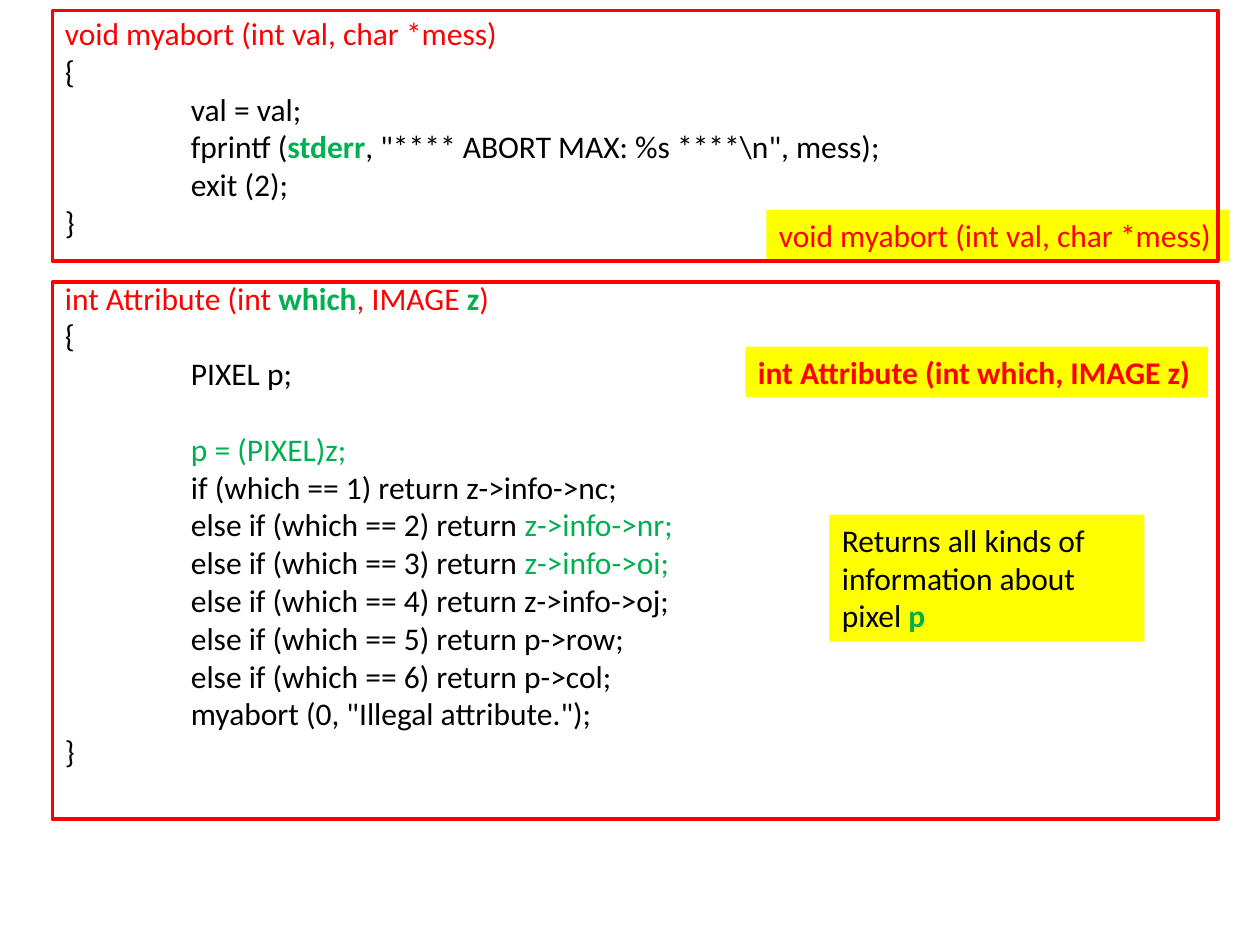
from lxml import etree
from pptx import Presentation, util as u
from pptx.dml.color import RGBColor
from pptx.enum import shapes, text
from pptx.oxml import ns

RED = RGBColor(0xFF, 0x00, 0x00)
GREEN = RGBColor(0x00, 0xB0, 0x50)
BLACK = RGBColor(0x00, 0x00, 0x00)
YELLOW = RGBColor(0xFF, 0xFF, 0x00)

# Grid: 120 columns by 90 rows on a 10 x 7.5 inch slide
CELL = u.Inches(10) // 120
FONT, SIZE, LINE = "Calibri", 18, 21.6
TAB = u.Inches(1)

# Each line is a list of (text, format) runs
ABORT_CODE = [
    [("void myabort (int val, char *mess)", dict(color=RED))],
    [("{", {})],
    [("\tval = val;", {})],
    [("\tfprintf (", {}), ("stderr", dict(color=GREEN, bold=True)),
     (', "**** ABORT MAX: %s ****\\n", mess);', {})],
    [("\texit (2);", {})],
    [("}", {})],
]
ATTRIBUTE_CODE = [
    [("int Attribute (int ", dict(color=RED)), ("which", dict(color=GREEN, bold=True)),
     (", IMAGE ", dict(color=RED)), ("z", dict(color=GREEN, bold=True)),
     (")", dict(color=RED))],
    [("{", {})],
    [("\tPIXEL p;", {})],
]
ATTRIBUTE_BODY = [
    [("\t", {}), ("p = (PIXEL)z;", dict(color=GREEN))],
    [("\tif (which == 1) return z->info->nc;", {})],
    [("\telse if (which == 2) return ", {}), ("z->info->nr;", dict(color=GREEN))],
    [("\telse if (which == 3) return ", {}), ("z->info->oi;", dict(color=GREEN))],
    [("\telse if (which == 4) return z->info->oj;", {})],
    [("\telse if (which == 5) return p->row;", {})],
    [("\telse if (which == 6) return p->col;", {})],
    [('\tmyabort (0, "Illegal attribute.");', {})],
    [("}", {})],
]


def cells(*grid):
    return [round(n * CELL) for n in grid]


def add_run(p, content, color=BLACK, bold=False):
    r = p.add_run()
    r.text = content
    r.font.name, r.font.size = FONT, u.Pt(SIZE)
    r.font.bold = bold
    r.font.color.rgb = color


def set_tab(p, position):
    tabs = etree.SubElement(p._p.get_or_add_pPr(), ns.qn("a:tabLst"))
    etree.SubElement(tabs, ns.qn("a:tab"), pos=str(position), algn="l")


def add_code(s, grid, blocks):
    """One text box; blocks are set one line apart."""
    tf = s.shapes.add_textbox(*cells(*grid)).text_frame
    tf.word_wrap = True
    p = None
    for block in blocks:
        for i, line in enumerate(block):
            first = p is None
            p = tf.paragraphs[0] if first else tf.add_paragraph()
            if i == 0 and not first:
                p.space_before = u.Pt(LINE)
            set_tab(p, TAB)
            for content, fmt in line:
                add_run(p, content, **fmt)


def add_box(s, grid):
    sp = s.shapes.add_shape(shapes.MSO_SHAPE.RECTANGLE, *cells(*grid))
    sp.shadow.inherit = False
    return sp


def add_frame(s, grid):
    sp = add_box(s, grid)
    sp.fill.background()
    sp.line.color.rgb = RED
    sp.line.width = u.Pt(2)


def add_label(s, grid, runs, wrap=False):
    sp = add_box(s, grid)
    sp.fill.solid()
    sp.fill.fore_color.rgb = YELLOW
    sp.line.fill.background()
    tf = sp.text_frame
    tf.word_wrap = wrap
    tf.vertical_anchor = text.MSO_ANCHOR.TOP
    p = tf.paragraphs[0]
    p.alignment = text.PP_ALIGN.LEFT
    for content, fmt in runs:
        add_run(p, content, **fmt)


def main():
    prs = Presentation()
    prs.slide_width, prs.slide_height = cells(120, 90)
    s = prs.slides.add_slide(prs.slide_layouts[6])

    # Source code of both functions
    add_code(s, (5, 0.75, 93, 74), [ABORT_CODE, ATTRIBUTE_CODE, ATTRIBUTE_BODY])

    # Signature labels
    add_label(s, (73, 20, 44.05, 4.85),
              [("void myabort (int val, char *mess)", dict(color=RED))])
    add_label(s, (71, 33, 44.05, 4.85),
              [("int Attribute (int which, IMAGE z)", dict(color=RED, bold=True))])

    # Frames around the functions
    for top, height in ((1, 23.85), (26.85, 51.15)):
        add_frame(s, (5, top, 111, height))

    # Explanation
    add_label(s, (79, 49, 30, 12.1),
              [("Returns all kinds of information about pixel ", {}),
               ("p", dict(color=GREEN, bold=True))], wrap=True)

    prs.save("out.pptx")


if __name__ == "__main__":
    main()
